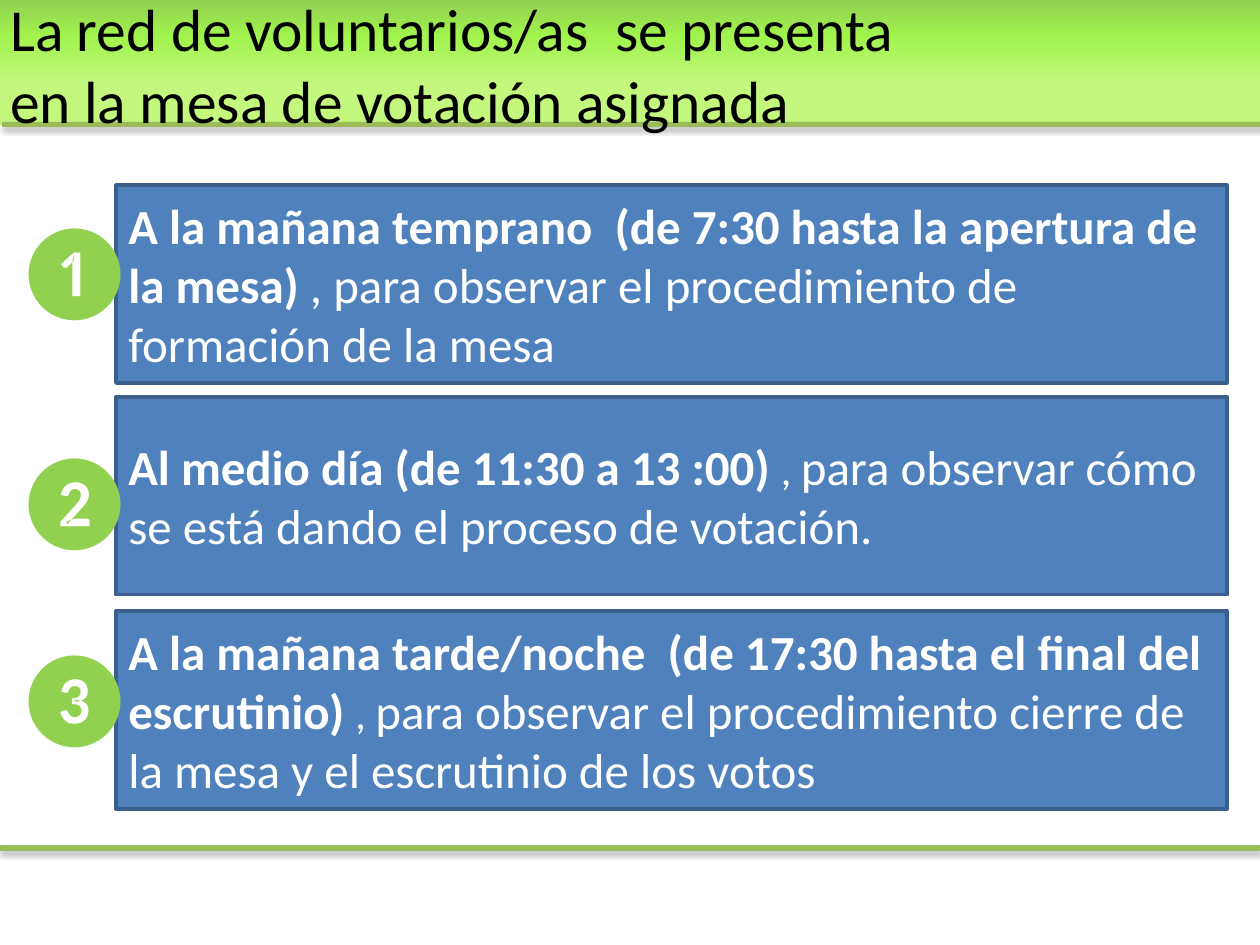
from lxml import etree
from pptx import Presentation
from pptx.dml.color import RGBColor
from pptx.enum.shapes import MSO_CONNECTOR, MSO_SHAPE
from pptx.enum.text import MSO_ANCHOR as ANCHOR, MSO_AUTO_SIZE as AUTO, PP_ALIGN as ALIGN
from pptx.oxml import parse_xml
from pptx.oxml.ns import nsdecls
from pptx.util import Pt

TITLE = "La red de voluntarios/as  se presenta \ven la mesa de votación asignada"
STEPS = [
    ("❶", 105.84, 116.64, [
        ("A la mañana temprano  (de 7:30 hasta la apertura de la mesa) ", 28, True),
        (", para observar el procedimiento de formación de la mesa", 28, False)]),
    ("❷", 226.8, 247.68, [
        ("Al medio día (de 11:30 a 13 :00) ", 28, True),
        (", ", 24, False),
        ("para observar cómo se está dando el proceso de votación.", 28, False)]),
    ("❸", 349.2, 360.72, [
        ("A la mañana tarde/noche  (de 17:30 hasta el final del escrutinio) ", 28, True),
        (", ", 24, False),
        ("para observar el procedimiento cierre de la mesa y el escrutinio de los votos", 28, False)]),
]
RULES = [(0, 484.56), (1.44, 71.28)]
BAND_STOPS = [(0, "92D050"), (30, "A1F44E"), (65, "C3F77D")]
COLORS = {"box": "4F81BD", "edge": "3A5F8C", "badge": "92D050",
          "rule": "9BBB59", "text": "FFFFFF", "title": "000000"}
FONT = "Calibri"
W, H = 720, 540


def rgb(name):
    return RGBColor.from_string(COLORS[name])


def set_font(font, size, color):
    font.name, font.size = FONT, Pt(size)
    font.color.rgb = rgb(color)


def add_rect(s, x, y, w, h):
    sp = s.shapes.add_shape(MSO_SHAPE.RECTANGLE, Pt(x), Pt(y), Pt(w), Pt(h))
    sp.shadow.inherit = False
    return sp


def add_band(s):
    sp = add_rect(s, 0, 0, W, 71.28)
    sp.line.fill.background()
    sp.fill.gradient()
    stops = "".join(f'<a:gs pos="{pos * 1000}"><a:srgbClr val="{color}"/></a:gs>'
                    for pos, color in BAND_STOPS)
    grad = parse_xml(f'<a:gradFill {nsdecls("a")} rotWithShape="1"><a:gsLst>{stops}</a:gsLst>'
                     '<a:lin ang="5400000" scaled="0"/></a:gradFill>')
    props = sp.element.spPr
    props.replace(props.find("{*}gradFill"), grad)


def add_rule(s, x, y):
    line = s.shapes.add_connector(MSO_CONNECTOR.STRAIGHT, Pt(x), Pt(y), Pt(x + W), Pt(y))
    line.line.color.rgb = rgb("rule")
    line.line.width = Pt(3)
    line.element.spPr.append(etree.fromstring(
        f'<a:effectLst {nsdecls("a")}><a:outerShdw blurRad="{Pt(3.1)}" dist="{Pt(1.8)}" '
        'dir="5400000" rotWithShape="0"><a:srgbClr val="000000"><a:alpha val="35000"/>'
        '</a:srgbClr></a:outerShdw></a:effectLst>'))


def add_box(s, y, runs):
    sp = add_rect(s, 66.24, y, 635.04, 113.04)
    sp.fill.solid()
    sp.fill.fore_color.rgb = rgb("box")
    sp.line.color.rgb = rgb("edge")
    sp.line.width = Pt(2)
    tf = sp.text_frame
    tf.word_wrap = True
    tf.vertical_anchor = ANCHOR.MIDDLE
    p = tf.paragraphs[0]
    p.alignment = ALIGN.LEFT
    for text, size, bold in runs:
        r = p.add_run()
        r.text = text
        set_font(r.font, size, "text")
        r.font.bold = bold


def add_badge(s, y, number):
    tf = s.shapes.add_textbox(Pt(0), Pt(y), Pt(70.56), Pt(72.72)).text_frame
    tf.word_wrap = True
    tf.auto_size = AUTO.SHAPE_TO_FIT_TEXT
    p = tf.paragraphs[0]
    p.text = number
    set_font(p.font, 54, "badge")


def place_title(s):
    sp = s.shapes.title
    sp.element.getparent().append(sp.element)
    sp.left, sp.top, sp.width, sp.height = Pt(2.88), Pt(-8.64), Pt(643.68), Pt(90)
    tf = sp.text_frame
    tf.word_wrap = True
    tf.auto_size = AUTO.NONE
    tf.vertical_anchor = ANCHOR.MIDDLE
    tf.margin_left = tf.margin_right = tf.margin_top = tf.margin_bottom = Pt(2.88)
    p = tf.paragraphs[0]
    p.text = TITLE
    p.alignment = ALIGN.LEFT
    set_font(p.font, 34, "title")


def main():
    prs = Presentation()
    prs.slide_width, prs.slide_height = Pt(W), Pt(H)
    s = prs.slides.add_slide(prs.slide_layouts[5])
    add_band(s)
    for x, y in RULES:
        add_rule(s, x, y)
    for number, box_top, badge_top, runs in STEPS:
        add_box(s, box_top, runs)
        add_badge(s, badge_top, number)
    place_title(s)
    prs.save("out.pptx")


if __name__ == "__main__":
    main()
